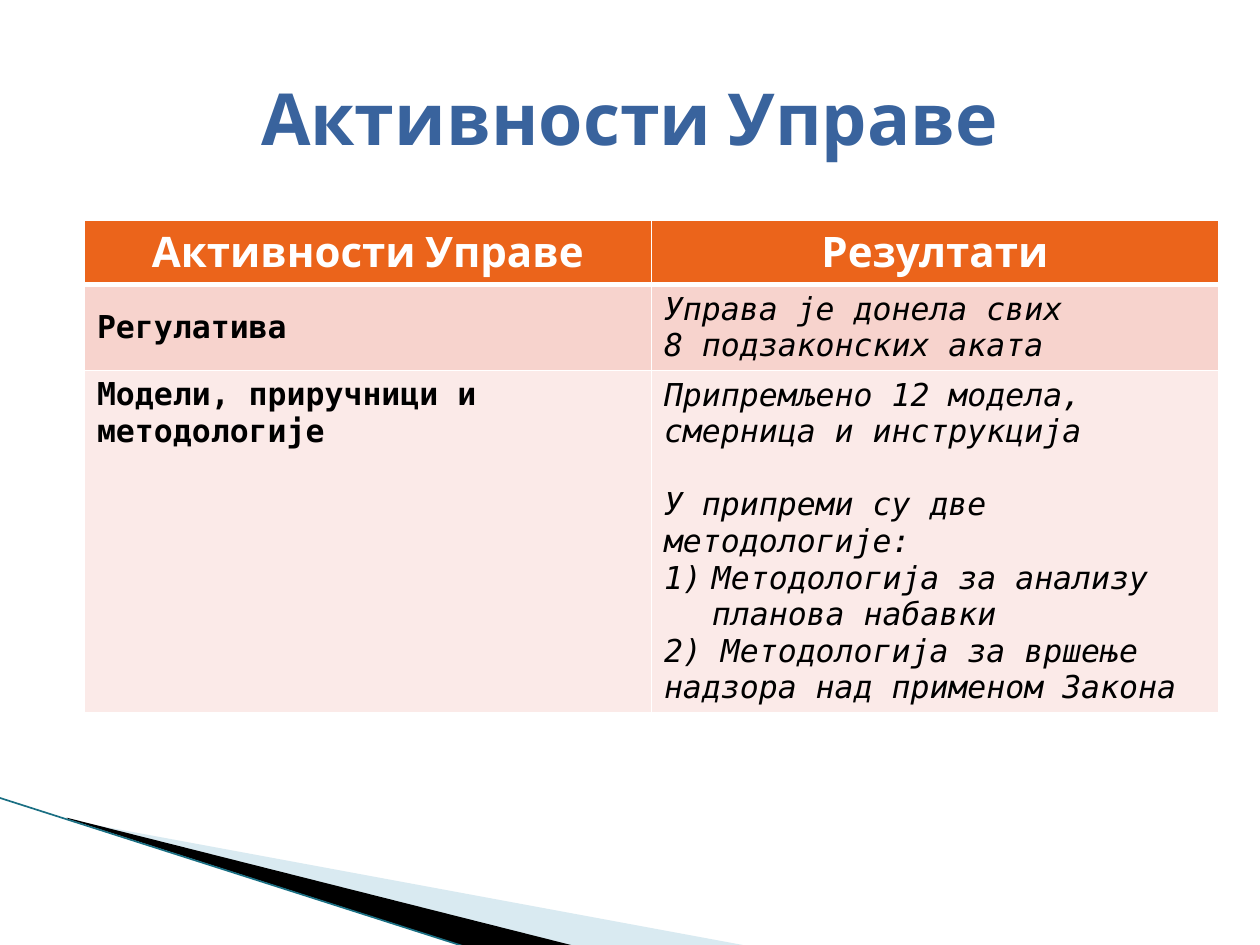
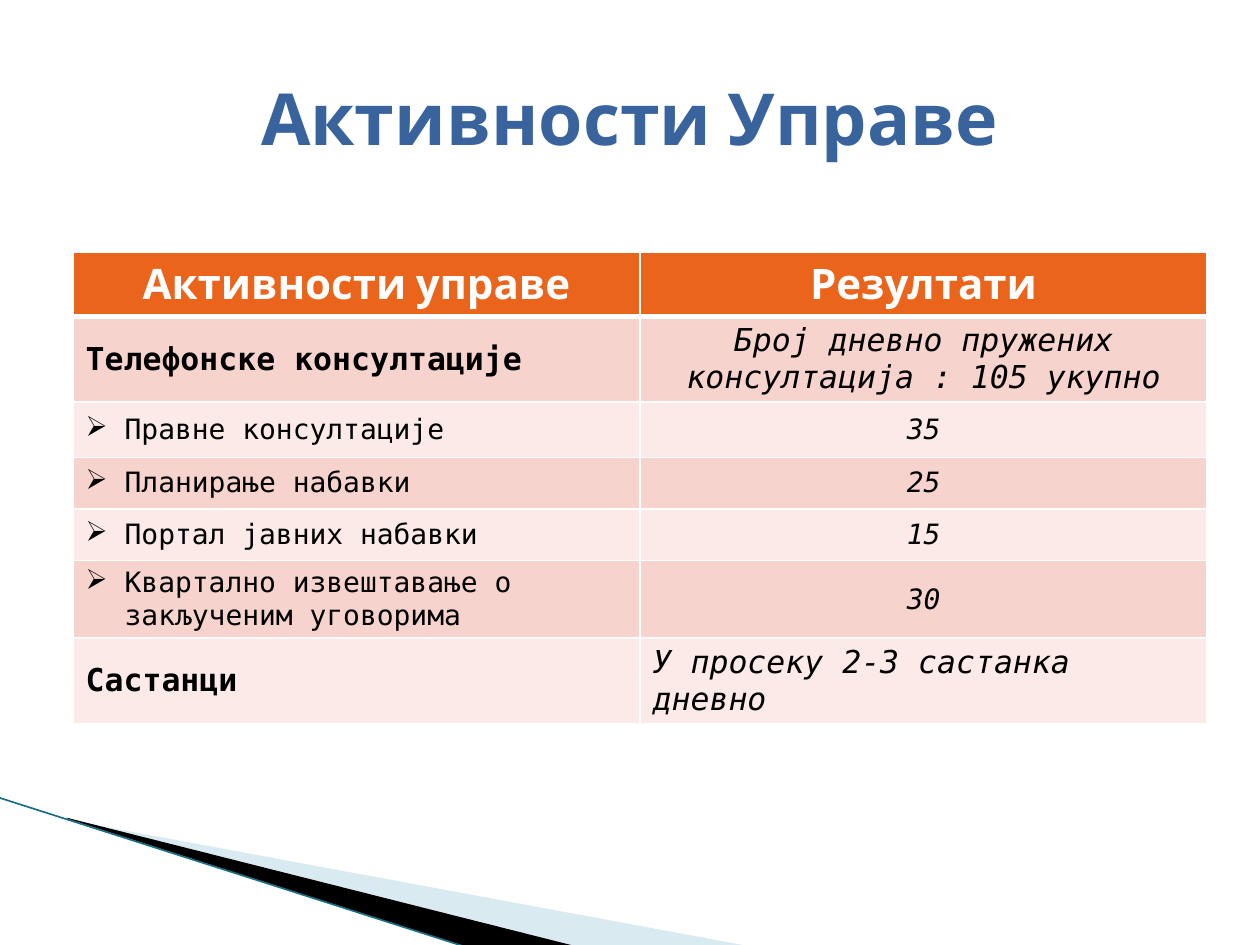
from lxml.etree import SubElement
from pptx import Presentation
from pptx.dml.color import RGBColor
from pptx.enum.text import MSO_ANCHOR, MSO_AUTO_SIZE, PP_ALIGN
from pptx.oxml.ns import qn
from pptx.util import Inches, Pt

TITLE = "Активности Управе"
HEADING_FONT, BODY_FONT = "Cabin", "DejaVu Sans Mono"
WHITE, BLACK, BLUE, ORANGE = "FFFFFF", "000000", "39639D", "EB641B"
BANDS = ("F7D3CD", "FBEAE8")
PALE_BLUE, TEAL = "A0CBDC", "1A6F83"
COLUMN_WIDTH = 4.5
CENTER, LEFT = PP_ALIGN.CENTER, PP_ALIGN.LEFT

ARROW_BULLET = (0.31, "buChar", {"char": "➢"})
NUMBER_BULLET = (0.38, "buAutoNum", {"type": "arabicParenR"})


def text_style(size, color=BLACK, name=BODY_FONT, bold=False, italic=False,
               alignment=LEFT, bullet=None, space_before=0):
    font = {"size": Pt(size), "name": name, "bold": bold, "italic": italic}
    return {"font": font, "color": color, "alignment": alignment,
            "bullet": bullet, "space_before": Pt(space_before)}


STYLES = {
    "title": text_style(41, BLUE, HEADING_FONT, bold=True, alignment=CENTER),
    "header": text_style(24, WHITE, HEADING_FONT, bold=True, alignment=CENTER),
    "topic": text_style(18, bold=True),
    "result": text_style(18, italic=True),
    "spaced result": text_style(18, italic=True, space_before=21),
    "numbered result": text_style(18, italic=True, bullet=NUMBER_BULLET),
    "summary": text_style(18, italic=True, alignment=CENTER),
    "item": text_style(16, bullet=ARROW_BULLET),
    "count": text_style(16, italic=True, alignment=CENTER),
}


def consultation(subject, count):
    return 0.41, [("item", subject)], [("count", count)]


# Each row: height, left cell, right cell; a cell is a list of (style, text)
TABLES = [
    {"left": 0.67, "top": 1.75, "top_anchored": {(2, 0)}, "rows": [
        (0.51, [("header", "Активности Управе")], [("header", "Резултати")]),
        (0.67, [("topic", "Регулатива")],
         [("result", "Управа је донела свих"),
          ("result", "8 подзаконских аката")]),
        (2.71, [("topic", "Модели, приручници и методологије")],
         [("result", "Припремљено 12 модела, смерница и инструкција"),
          ("spaced result", "У припреми су две методологије:"),
          ("numbered result", "Методологија за анализу планова набавки"),
          ("result", "2) Методологија за вршење надзора над применом Закона")]),
    ]},
    {"left": 0.58, "top": 2, "top_anchored": set(), "rows": [
        (0.51, [("header", "Активности управе")], [("header", "Резултати")]),
        (0.67, [("topic", "Телефонске консултације")],
         [("summary", "Број дневно пружених консултација : 105 укупно")]),
        (0.44, *consultation("Правне консултације", "35")[1:]),
        consultation("Планирање набавки", "25"),
        consultation("Портал јавних набавки", "15"),
        (0.61, *consultation("Квартално извештавање о закљученим уговорима", "30")[1:]),
        (0.67, [("topic", "Састанци")],
         [("result", "У просеку 2-3 састанка дневно")]),
    ]},
]

# Outline, colour, opacity in percent
CORNER_WEDGES = [
    ([(0.55, 6.51), (5.95, 7.51), (4.56, 7.51), (0.55, 6.5)], PALE_BLUE, 40),
    ([(0.53, 6.49), (4.57, 7.51), (3.72, 7.52), (0.54, 6.5)], BLACK, 100),
]
CORNER_LINE = (-0.01, 6.33, 3.71, 7.52)


def rgb(color):
    return RGBColor.from_string(color)


def fill_solid(fill, color):
    fill.solid()
    fill.fore_color.rgb = rgb(color)


def add_bullet(paragraph, indent, tag, attributes):
    properties = paragraph._p.get_or_add_pPr()
    properties.set("marL", str(Inches(indent)))
    properties.set("indent", str(-Inches(indent)))
    SubElement(properties, qn("a:" + tag), attributes)


def write_text(text_frame, lines):
    for index, (style_name, text) in enumerate(lines):
        style = STYLES[style_name]
        paragraph = text_frame.paragraphs[0] if index == 0 else text_frame.add_paragraph()
        if style["bullet"]:
            add_bullet(paragraph, *style["bullet"])
        paragraph.alignment = style["alignment"]
        if style["space_before"]:
            paragraph.space_before = style["space_before"]
        run = paragraph.add_run()
        run.text = text
        for attribute, value in style["font"].items():
            setattr(run.font, attribute, value)
        run.font.color.rgb = rgb(style["color"])


def add_title(slide):
    title = slide.shapes.title
    box = {"left": 0.5, "top": 0.3, "width": 9, "height": 1.25}
    for attribute, value in box.items():
        setattr(title, attribute, Inches(value))
    title.text_frame.auto_size = MSO_AUTO_SIZE.NONE
    title.text_frame.vertical_anchor = MSO_ANCHOR.MIDDLE
    write_text(title.text_frame, [("title", TITLE)])


def add_corner(slide):
    for points, color, opacity in CORNER_WEDGES:
        start, *others = [(Inches(x), Inches(y)) for x, y in points]
        builder = slide.shapes.build_freeform(*start)
        builder.add_line_segments(others)
        wedge = builder.convert_to_shape()
        wedge.shadow.inherit = False
        wedge.line.fill.background()
        fill_solid(wedge.fill, color)
        if opacity < 100:
            color_element = wedge._element.spPr.find(".//" + qn("a:srgbClr"))
            SubElement(color_element, qn("a:alpha"), val=str(opacity * 1000))
    line = slide.shapes.add_connector(1, *map(Inches, CORNER_LINE))
    line.line.color.rgb = rgb(TEAL)
    line.line.width = Pt(0.95)
    SubElement(line._element.spPr, qn("a:effectLst"))


def add_borders(cell, row_index):
    """White 1 pt borders, with a 3 pt rule under the header row."""
    widths = {"lnL": 1, "lnR": 1, "lnT": 3 if row_index == 1 else 1,
              "lnB": 3 if row_index == 0 else 1}
    properties = cell._tc.get_or_add_tcPr()
    for tag, width in widths.items():
        border = SubElement(properties, qn("a:" + tag), w=str(Pt(width)))
        solid = SubElement(border, qn("a:solidFill"))
        SubElement(solid, qn("a:srgbClr"), val=WHITE)


def add_activity_table(slide, left, top, rows, top_anchored):
    total_height = sum(height for height, *_ in rows)
    frame = slide.shapes.add_table(len(rows), 2, Inches(left), Inches(top),
                                   Inches(2 * COLUMN_WIDTH), Inches(total_height))
    table = frame.table
    table.horz_banding = False
    for row_index, (height, *cells) in enumerate(rows):
        table.rows[row_index].height = Inches(height)
        color = BANDS[(row_index - 1) % 2] if row_index else ORANGE
        for column_index, lines in enumerate(cells):
            cell = table.cell(row_index, column_index)
            add_borders(cell, row_index)
            fill_solid(cell.fill, color)
            at_top = (row_index, column_index) in top_anchored
            cell.vertical_anchor = MSO_ANCHOR.TOP if at_top else MSO_ANCHOR.MIDDLE
            write_text(cell.text_frame, lines)


def main():
    presentation = Presentation()
    presentation.slide_width, presentation.slide_height = Inches(10), Inches(7.5)
    for table in TABLES:
        slide = presentation.slides.add_slide(presentation.slide_layouts[5])
        fill_solid(slide.background.fill, WHITE)
        add_corner(slide)
        add_activity_table(slide, **table)
        add_title(slide)
    presentation.save("out.pptx")


if __name__ == "__main__":
    main()
